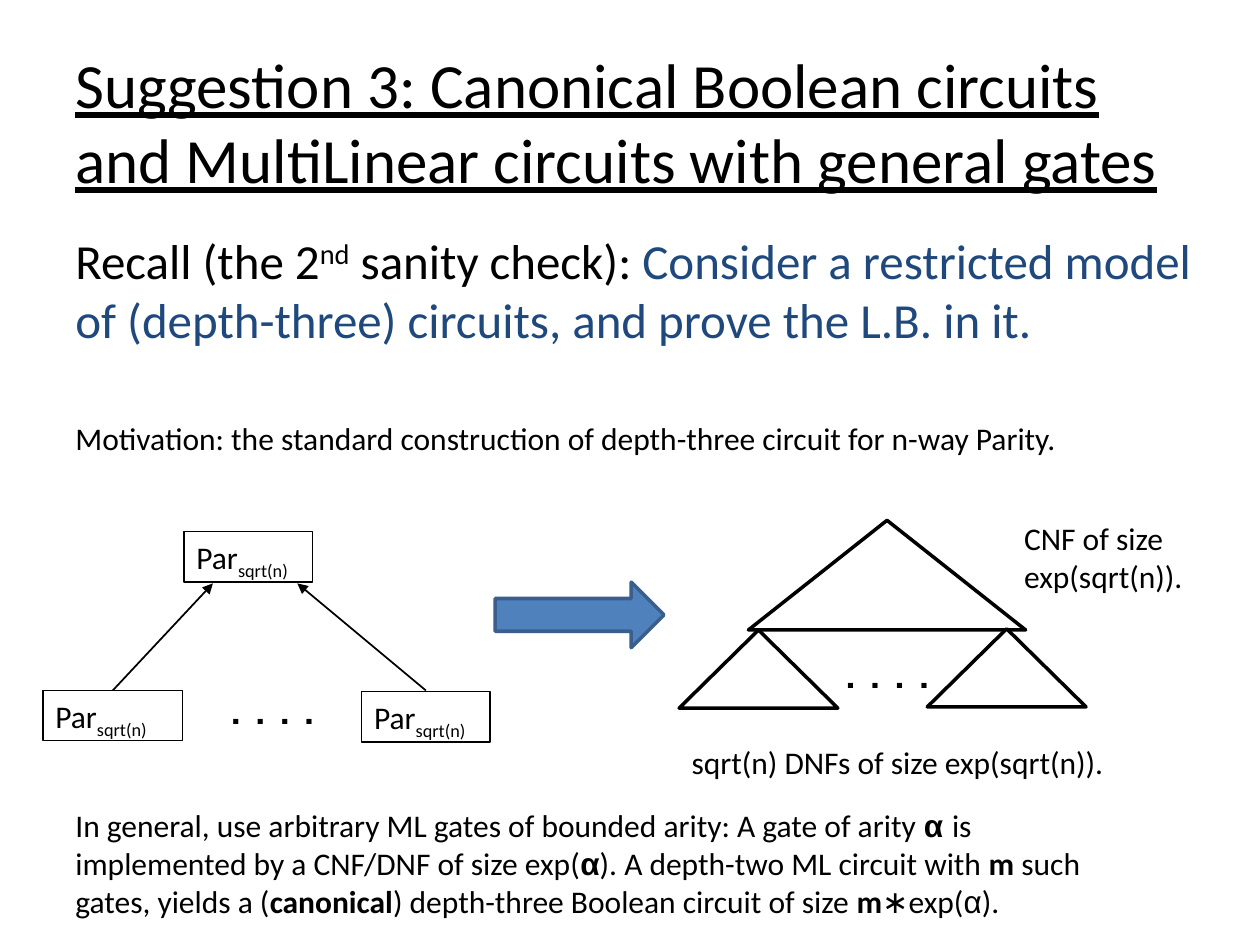
from dataclasses import dataclass

from lxml.etree import SubElement
from pptx import Presentation
from pptx.dml.color import RGBColor
from pptx.enum.shapes import MSO_CONNECTOR as Connector, MSO_SHAPE as Shape
from pptx.enum.text import MSO_ANCHOR as Anchor, MSO_AUTO_SIZE as AutoSize, PP_ALIGN as Align
from pptx.oxml.ns import qn
from pptx.util import Inches, Pt


@dataclass(frozen=True)
class Theme:
    ink: str = "000000"
    paper: str = "FFFFFF"
    accent: str = "1F497D"
    arrow: str = "4F81BD"
    arrow_edge: str = "3A5F8C"
    font: str = "Calibri"
    greek: str = "Arial"
    title: int = 36
    lead: int = 28
    body: int = 18


THEME = Theme()
BOLD = {"bold": True}
SUBSCRIPT = {"baseline": -25}
ALPHA = {"font": THEME.greek}


def write(shape, *runs, size=THEME.body, underline=None, align=Align.LEFT,
          anchor=Anchor.TOP, rtl=False, grow=True):
    """Fill a shape with one paragraph; a run is a string or (string, format)."""
    frame = shape.text_frame
    frame.word_wrap = True
    frame.vertical_anchor = anchor
    frame.auto_size = AutoSize.SHAPE_TO_FIT_TEXT if grow else AutoSize.NONE
    paragraph = frame.paragraphs[0]
    paragraph.alignment = align
    if rtl:
        paragraph._p.get_or_add_pPr().set("rtl", "1")
    for item in runs:
        text, style = (item, {}) if isinstance(item, str) else item
        run = paragraph.add_run()
        run.text = text
        font = run.font
        font.name = style.get("font", THEME.font)
        font.size = Pt(size)
        font.bold = style.get("bold", False)
        font.underline = underline
        font.color.rgb = RGBColor.from_string(style.get("color", THEME.ink))
        if "baseline" in style:
            run._r.get_or_add_rPr().set("baseline", str(style["baseline"] * 1000))


def add_text(slide, box, *runs, **style):
    write(slide.shapes.add_textbox(*map(Inches, box)), *runs, **style)


def add_outline(slide, kind, box, fill=None, line=THEME.ink, width=2):
    shape = slide.shapes.add_shape(kind, *map(Inches, box))
    shape.shadow.inherit = False
    if fill:
        shape.fill.solid()
        shape.fill.fore_color.rgb = RGBColor.from_string(fill)
    else:
        shape.fill.background()
    shape.line.color.rgb = RGBColor.from_string(line)
    shape.line.width = Pt(width)
    return shape


def add_arrow(slide, start, end):
    arrow = slide.shapes.add_connector(Connector.STRAIGHT, *map(Inches, start + end))
    arrow.line.color.rgb = RGBColor.from_string(THEME.ink)
    arrow.line.width = Pt(1)
    SubElement(arrow.line._get_or_add_ln(), qn("a:tailEnd"), type="triangle")
    SubElement(arrow._element.spPr, qn("a:effectLst"))


def add_dots(slide, left, top):
    add_text(slide, (left, top, 0.94, 0.57), ". . . .",
             size=THEME.lead, align=Align.CENTER, rtl=True)


def heading(slide, box):
    """Title with the recalled statement and the motivation below it."""
    left, top, width, _ = box
    add_text(slide, (left, top, width, 1.32),
             "Suggestion 3: Canonical Boolean circuits and MultiLinear circuits with general gates",
             size=THEME.title, underline=True, anchor=Anchor.MIDDLE, grow=False)
    add_text(slide, (left, top + 1.48, width, 1.04),
             "Recall (the 2", ("nd", {"baseline": 30}), " sanity check): ",
             ("Consider a restricted model of (depth-three) circuits, and prove the L.B. in it.",
              {"color": THEME.accent}),
             size=THEME.lead)
    add_text(slide, (left, top + 2.98, 8.52, 0.4),
             "Motivation: the standard construction of depth-three circuit for n-way Parity.")


def parity_tree(slide, box):
    """Root parity gate fed by a row of smaller parity gates."""
    left, top, width, height = box
    gate_height = 0.4
    gate_row = top + height - gate_height
    gates = [(left + 1.12, top, 1.02), (left, gate_row, 1.11),
             (left + width - 1.02, gate_row + 0.01, 1.02)]
    for x, y, gate_width in gates:
        gate = add_outline(slide, Shape.RECTANGLE, (x, y, gate_width, gate_height), width=0.75)
        write(gate, "Par", ("sqrt(n)", SUBSCRIPT))
    add_dots(slide, left + 1.35, top + 1.09)

    # Inputs into the lower edge of the root gate
    for (x, _, gate_width), target in zip(gates[1:], (left + 1.35, left + 2.02)):
        add_arrow(slide, (x + gate_width / 2, gate_row), (target, top + 0.41))


def normal_form_tree(slide, box):
    """CNF triangle standing on a row of DNF triangles."""
    left, top, width, _ = box
    dnf_width, dnf_height = 1.26, 0.62
    add_outline(slide, Shape.ISOSCELES_TRIANGLE, (left + 0.55, top, 2.2, 0.87), THEME.paper)
    add_text(slide, (left + 2.64, top - 0.06, 1.57, 0.71), "CNF of size exp(sqrt(n)).")
    for x, y in ((left, top + 0.87), (left + width - dnf_width, top + 0.86)):
        add_outline(slide, Shape.ISOSCELES_TRIANGLE, (x, y, dnf_width, dnf_height), THEME.paper)
    add_dots(slide, left + 1.18, top + 0.9)
    add_text(slide, (left, top + 1.72, 3.74, 0.4), "sqrt(n) DNFs of size exp(sqrt(n)).")


def conclusion(slide, box):
    """General statement about gates of bounded arity."""
    add_text(slide, box,
             "In general, use arbitrary ML gates of bounded arity: A gate of arity ",
             ("α ", ALPHA | BOLD), "is implemented by a CNF/DNF of size exp(",
             ("α", ALPHA | BOLD), "). A depth-two ML circuit with ", ("m", BOLD),
             " such gates, yields a (", ("canonical", BOLD),
             ") depth-three Boolean circuit of size ", ("m", BOLD),
             "∗exp(", ("α", ALPHA), ").")


def main():
    deck = Presentation()
    deck.slide_width, deck.slide_height = Inches(10), Inches(7.5)
    slide = deck.slides.add_slide(deck.slide_layouts[6])

    heading(slide, (0.5, 0.3, 9.07, 3.38))
    parity_tree(slide, (0.34, 4.22, 3.55, 1.66))
    normal_form_tree(slide, (5.39, 4.13, 3.23, 1.49))
    # Step from the parity tree to its normal forms
    add_outline(slide, Shape.RIGHT_ARROW, (3.93, 4.62, 1.34, 0.52),
                THEME.arrow, THEME.arrow_edge)
    conclusion(slide, (0.5, 6.35, 8.52, 1.01))

    deck.save("out.pptx")


if __name__ == "__main__":
    main()
